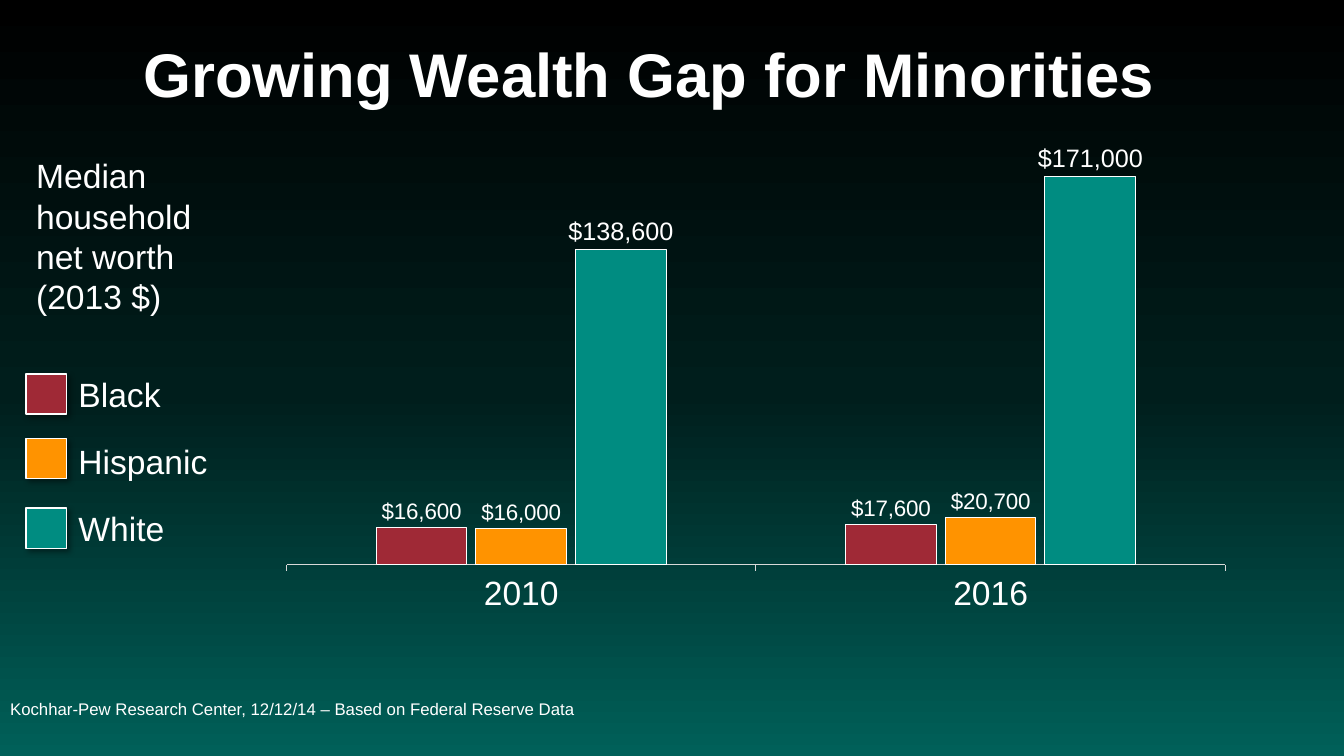
from lxml import etree
from pptx import Presentation
from pptx.chart.data import CategoryChartData
from pptx.dml.color import RGBColor
from pptx.enum.chart import XL_CHART_TYPE, XL_LABEL_POSITION, XL_TICK_LABEL_POSITION, XL_TICK_MARK
from pptx.enum.shapes import MSO_SHAPE
from pptx.enum.text import MSO_ANCHOR, MSO_AUTO_SIZE, PP_ALIGN
from pptx.oxml.ns import qn
from pptx.util import Inches, Pt

COLUMN = XL_CHART_TYPE.COLUMN_CLUSTERED
OUTSIDE = XL_LABEL_POSITION.OUTSIDE_END
LOW = XL_TICK_LABEL_POSITION.LOW
TICK, NO_TICK = XL_TICK_MARK.OUTSIDE, XL_TICK_MARK.NONE
RECT = MSO_SHAPE.RECTANGLE
TOP, MIDDLE = MSO_ANCHOR.TOP, MSO_ANCHOR.MIDDLE
NO_FIT = MSO_AUTO_SIZE.NONE
LEFT = PP_ALIGN.LEFT

HEX = {"white": "FFFFFF", "axis": "D9D9D9", "black": "000000",
       "red": "9F2936", "orange": "FF9300", "teal": "008C81"}
FADE = [(0, "000000"), (52, "001E1C"), (100, "006059")]

TITLE = "Growing Wealth Gap for Minorities"
SOURCE = "Kochhar-Pew Research Center, 12/12/14 – Based on Federal Reserve Data"
MEASURE = "Median household net worth (2013 $)"
YEARS = ["2010", "2016"]
GROUPS = [
    {"name": "Black", "worth": (16600, 17600), "color": "red", "size": 16, "key": 3.71, "label": 3.66},
    {"name": "Hispanic", "worth": (16000, 20700), "color": "orange", "size": 16, "key": 4.35, "label": 4.33},
    {"name": "White", "worth": (138600, 171000), "color": "teal", "size": 18, "key": 5.04, "label": 4.99},
]
PLOT = {"x": 0.071, "y": 0.037, "w": 0.867, "h": 0.719}


def rgb(name):
    return RGBColor.from_string(HEX[name])


def apply(item, values):
    for name, value in values.items():
        setattr(item, name, value)


def style(font, size, bold=False):
    apply(font, {"name": "Arial", "size": Pt(size), "bold": bold})
    font.color.rgb = rgb("white")


def border(line, color, width):
    line.color.rgb = rgb(color)
    line.width = Pt(width)


def place(shape, *box):
    apply(shape, dict(zip(("left", "top", "width", "height"), map(Inches, box))))


def write(shape, text, size, bold=False, anchor=TOP, **spacing):
    frame = shape.text_frame
    apply(frame, {"text": text, "word_wrap": True, "auto_size": NO_FIT, "vertical_anchor": anchor})
    para = frame.paragraphs[0]
    props = para._p.get_or_add_pPr()
    apply(para, {"alignment": LEFT, **spacing})
    props.set("marL", "0")
    props.set("indent", "0")
    etree.SubElement(props, qn("a:buNone"))
    style(para.runs[0].font, size, bold)


def label(slide, text, *box):
    shape = slide.shapes.add_textbox(*map(Inches, box))
    write(shape, text, 24, space_after=Pt(12))


def paint(slide):
    fill = slide.background.fill
    fill.gradient()
    fill.gradient_angle = 270
    stops = slide.element.find(".//" + qn("a:gsLst"))
    for stop in list(stops):
        stops.remove(stop)
    for part, color in FADE:
        stop = etree.SubElement(stops, qn("a:gs"), pos=str(part * 1000))
        etree.SubElement(stop, qn("a:srgbClr"), val=color)


def shade(shape):
    shape.shadow.inherit = False
    effects = shape.element.spPr.find(qn("a:effectLst"))
    shadow = etree.SubElement(effects, qn("a:outerShdw"), blurRad=str(Pt(4)),
                              dist=str(Pt(3)), dir="2700000", algn="tl", rotWithShape="0")
    color = etree.SubElement(shadow, qn("a:srgbClr"), val=HEX["black"])
    etree.SubElement(color, qn("a:alpha"), val="40000")


def fix_plot(chart):
    area = chart.element.find(".//" + qn("c:plotArea"))
    for old in area.findall(qn("c:layout")):
        area.remove(old)
    layout = etree.Element(qn("c:layout"))
    manual = etree.SubElement(layout, qn("c:manualLayout"))
    etree.SubElement(manual, qn("c:layoutTarget"), val="inner")
    for side in "xy":
        etree.SubElement(manual, qn(f"c:{side}Mode"), val="edge")
    for side, value in PLOT.items():
        etree.SubElement(manual, qn(f"c:{side}"), val=str(value))
    area.insert(0, layout)


def draw_chart(slide):
    data = CategoryChartData()
    data.categories = YEARS
    for group in GROUPS:
        data.add_series(group["name"], group["worth"])
    box = map(Inches, (2.08, 1.1, 10.74, 5.96))
    chart = slide.shapes.add_chart(COLUMN, *box, data).chart
    apply(chart, {"has_legend": False, "has_title": False})
    style(chart.font, 24)

    years = chart.category_axis
    apply(years, {"major_tick_mark": TICK, "minor_tick_mark": NO_TICK,
                  "tick_label_position": LOW, "has_major_gridlines": False})
    style(years.tick_labels.font, 24)
    border(years.format.line, "axis", 0.75)
    apply(chart.value_axis, {"minimum_scale": 0, "maximum_scale": 190000, "major_unit": 25000,
                             "has_major_gridlines": False, "visible": False})

    plot = chart.plots[0]
    apply(plot, {"gap_width": 198, "overlap": -10, "vary_by_categories": False})
    for group, series in zip(GROUPS, plot.series):
        series.format.fill.solid()
        series.format.fill.fore_color.rgb = rgb(group["color"])
        border(series.format.line, "white", 0.75)
        labels = series.data_labels
        apply(labels, {"show_value": True, "position": OUTSIDE,
                       "number_format": '"$"#,##0', "number_format_is_linked": False})
        style(labels.font, group["size"])
    fix_plot(chart)


def draw_key(slide):
    for group in GROUPS:
        box = map(Inches, (0.26, group["key"], 0.4, 0.4))
        square = slide.shapes.add_shape(RECT, *box)
        square.fill.solid()
        square.fill.fore_color.rgb = rgb(group["color"])
        border(square.line, "white", 1)
        shade(square)
        label(slide, group["name"], 0.68, group["label"], 1.6, 0.5)


def main():
    deck = Presentation()
    apply(deck, {"slide_width": Inches(13.33), "slide_height": Inches(7.5)})
    slide = deck.slides.add_slide(deck.slide_layouts[1])
    paint(slide)
    title, source = slide.placeholders
    place(title, 1.32, 0.04, 11.5, 1.45)
    write(title, TITLE, 44, True, MIDDLE, line_spacing=0.9)
    place(source, 0, 6.58, 9, 0.92)
    write(source, SOURCE, 12, anchor=MIDDLE, line_spacing=0.9, space_before=Pt(0))
    label(slide, MEASURE, 0.26, 1.49, 1.82, 1.72)
    draw_chart(slide)
    draw_key(slide)
    deck.save("out.pptx")


if __name__ == "__main__":
    main()
